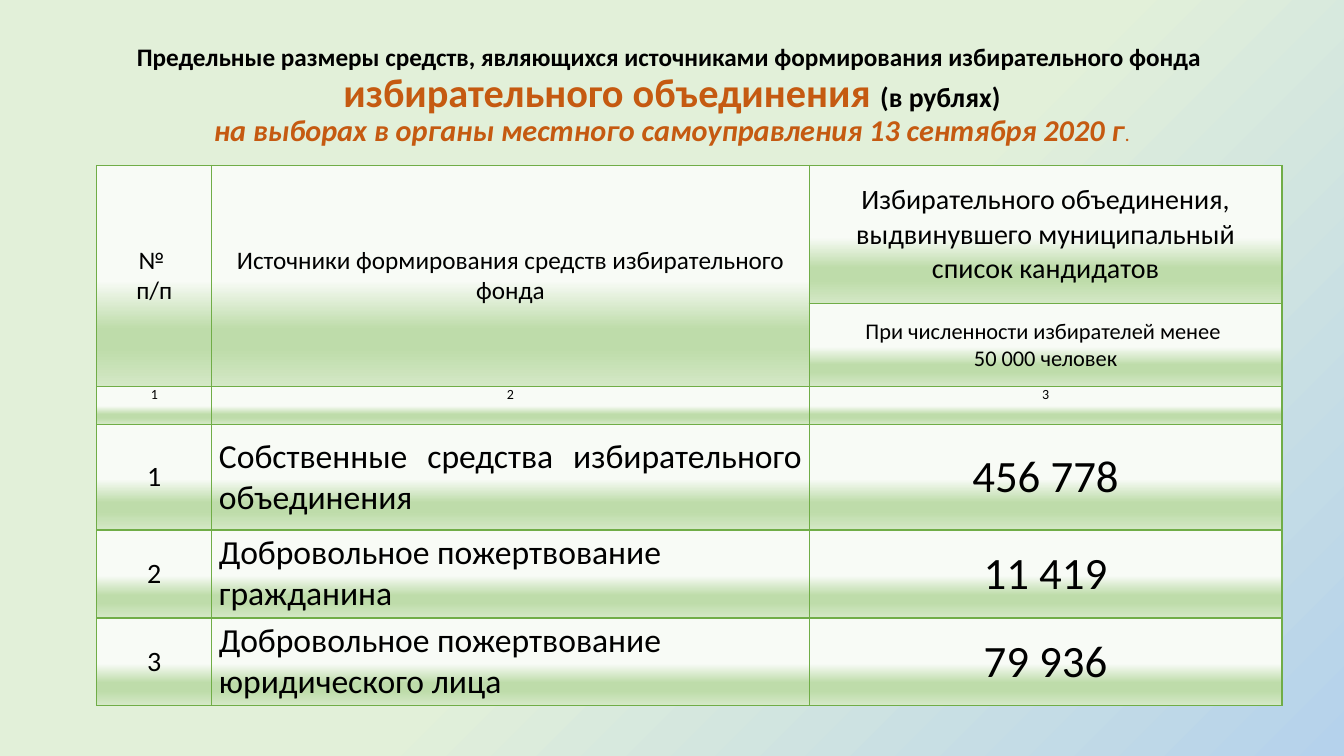
from dataclasses import dataclass

from lxml import etree
from pptx import Presentation
from pptx.dml.color import RGBColor
from pptx.enum.text import MSO_ANCHOR, MSO_AUTO_SIZE, PP_ALIGN
from pptx.oxml.ns import qn
from pptx.util import Cm, Pt

CENTER, LEFT, JUSTIFY = PP_ALIGN.CENTER, PP_ALIGN.LEFT, PP_ALIGN.JUSTIFY
TOP, MIDDLE = MSO_ANCHOR.TOP, MSO_ANCHOR.MIDDLE
NO_AUTOFIT = MSO_AUTO_SIZE.NONE
TITLE_ONLY = 5


@dataclass(frozen=True)
class Theme:
    font: str = "Calibri"
    ink: str = "000000"
    accent: str = "C55A11"
    border: str = "70AD47"
    backdrop: tuple = ((0, "B5D2EC"), (47, "E2F0D9"))
    cell: tuple = ((52, "F8FBF6"), (74, "BEDCAA"), (83, "BEDCAA"), (100, "D4E8C6"))
    intro: float = 18
    subject: float = 28.8
    unit: float = 19.8
    election: float = 21.6
    stop: float = 14.4
    header: float = 18
    group: float = 20
    condition: float = 16
    index: float = 10
    number: float = 20
    source: float = 24
    amount: float = 32


THEME = Theme()

SOURCES = [
    ("1", "Собственные средства избирательного объединения", JUSTIFY, "456\u00a0778"),
    ("2", "Добровольное пожертвование гражданина", LEFT, "11\u00a0419"),
    ("3", "Добровольное пожертвование юридического лица", LEFT, "79\u00a0936"),
]


def add_text(p, text, size, color=THEME.ink, bold=False, italic=False):
    r = p.add_run()
    r.text = text
    font = r.font
    font.name, font.size = THEME.font, Pt(size)
    font.bold, font.italic = bold, italic
    font.color.rgb = RGBColor.from_string(color)


def add_solid(parent, color):
    fill = etree.SubElement(parent, qn("a:solidFill"))
    etree.SubElement(fill, qn("a:srgbClr"), val=color)


def add_gradient(parent, stops):
    """Append a gradient fill and return it, still without a direction."""
    grad = etree.SubElement(parent, qn("a:gradFill"), rotWithShape="1")
    stop_list = etree.SubElement(grad, qn("a:gsLst"))
    for position, color in stops:
        gs = etree.SubElement(stop_list, qn("a:gs"), pos=str(position * 1000))
        etree.SubElement(gs, qn("a:srgbClr"), val=color)
    return grad


def paint_background(slide):
    """Spread a circular gradient from the bottom right corner."""
    slide.background.fill.solid()
    bg = slide.element.find(".//" + qn("p:bgPr"))
    bg.remove(bg[0])
    grad = add_gradient(bg, THEME.backdrop)
    circle = etree.SubElement(grad, qn("a:path"), path="circle")
    etree.SubElement(circle, qn("a:fillToRect"), l="100000", t="100000")
    bg.insert(0, grad)


def style_cell(cell):
    cell.margin_left = cell.margin_right = Cm(0.18)
    cell.margin_top = cell.margin_bottom = 0
    props = cell._tc.get_or_add_tcPr()
    for side in ("lnL", "lnR", "lnT", "lnB"):
        line = etree.SubElement(props, qn("a:" + side), w=str(Pt(1)))
        add_solid(line, THEME.border)
    grad = add_gradient(props, THEME.cell)
    etree.SubElement(grad, qn("a:lin"), ang="5400000", scaled="0")


def fill_cell(cell, *lines, size, align=CENTER, anchor=MIDDLE, gap=0):
    cell.vertical_anchor = anchor
    tf = cell.text_frame
    for i, line in enumerate(lines):
        p = tf.add_paragraph() if i else tf.paragraphs[0]
        p.alignment = align
        p.space_before = p.space_after = Pt(gap)
        add_text(p, line, size)


def build_title(slide, left, top, width, height):
    sp = slide.shapes.title
    sp.left, sp.top, sp.width, sp.height = Cm(left), Cm(top), Cm(width), Cm(height)
    tf = sp.text_frame
    tf.word_wrap, tf.auto_size, tf.vertical_anchor = True, NO_AUTOFIT, MIDDLE
    p = tf.paragraphs[0]
    p.alignment, p.line_spacing = CENTER, 0.9
    add_text(p, "Предельные размеры средств, являющихся источниками формирования "
                "избирательного фонда ", THEME.intro, bold=True)
    p.add_line_break()
    add_text(p, "избирательного объединения ", THEME.subject, THEME.accent, bold=True)
    add_text(p, "(в рублях)", THEME.unit, bold=True)
    p.add_line_break()
    add_text(p, "на выборах в органы местного самоуправления 13 сентября 2020 г",
             THEME.election, THEME.accent, bold=True, italic=True)
    add_text(p, ".", THEME.stop, THEME.accent, italic=True)


def build_table(slide, left, top, width, height):
    col_shares = (0.097, 0.504, 0.399)
    row_shares = (0.256, 0.153, 0.07, 0.196, 0.163, 0.162)
    frame = slide.shapes.add_table(len(row_shares), len(col_shares),
                                   Cm(left), Cm(top), Cm(width), Cm(height))
    table = frame.table
    table.first_row = table.horz_banding = False
    for column, share in zip(table.columns, col_shares):
        column.width = Cm(width * share)
    for row, share in zip(table.rows, row_shares):
        row.height = Cm(height * share)
    for cell in table.iter_cells():
        style_cell(cell)

    for col in (0, 1):
        table.cell(0, col).merge(table.cell(1, col))
    fill_cell(table.cell(0, 0), "№ ", "п/п", size=THEME.header)
    fill_cell(table.cell(0, 1), "Источники формирования средств избирательного фонда",
              size=THEME.header)
    fill_cell(table.cell(0, 2), "Избирательного объединения, выдвинувшего "
              "муниципальный список кандидатов", size=THEME.group)
    fill_cell(table.cell(1, 2), "При численности избирателей менее ",
              "50 000 человек", size=THEME.condition)
    for col in range(len(col_shares)):
        fill_cell(table.cell(2, col), str(col + 1), size=THEME.index, anchor=TOP)
    for row, (number, source, align, amount) in enumerate(SOURCES, start=3):
        fill_cell(table.cell(row, 0), number, size=THEME.number, gap=6)
        fill_cell(table.cell(row, 1), source, size=THEME.source, align=align, gap=6)
        fill_cell(table.cell(row, 2), amount, size=THEME.amount)


def main():
    prs = Presentation()
    prs.slide_width, prs.slide_height = Cm(33.87), Cm(19.05)
    slide = prs.slides.add_slide(prs.slide_layouts[TITLE_ONLY])
    paint_background(slide)
    build_title(slide, 2.33, 1.02, 29.21, 2.84)
    build_table(slide, 2.44, 4.17, 29.87, 13.61)
    prs.save("out.pptx")


if __name__ == "__main__":
    main()
